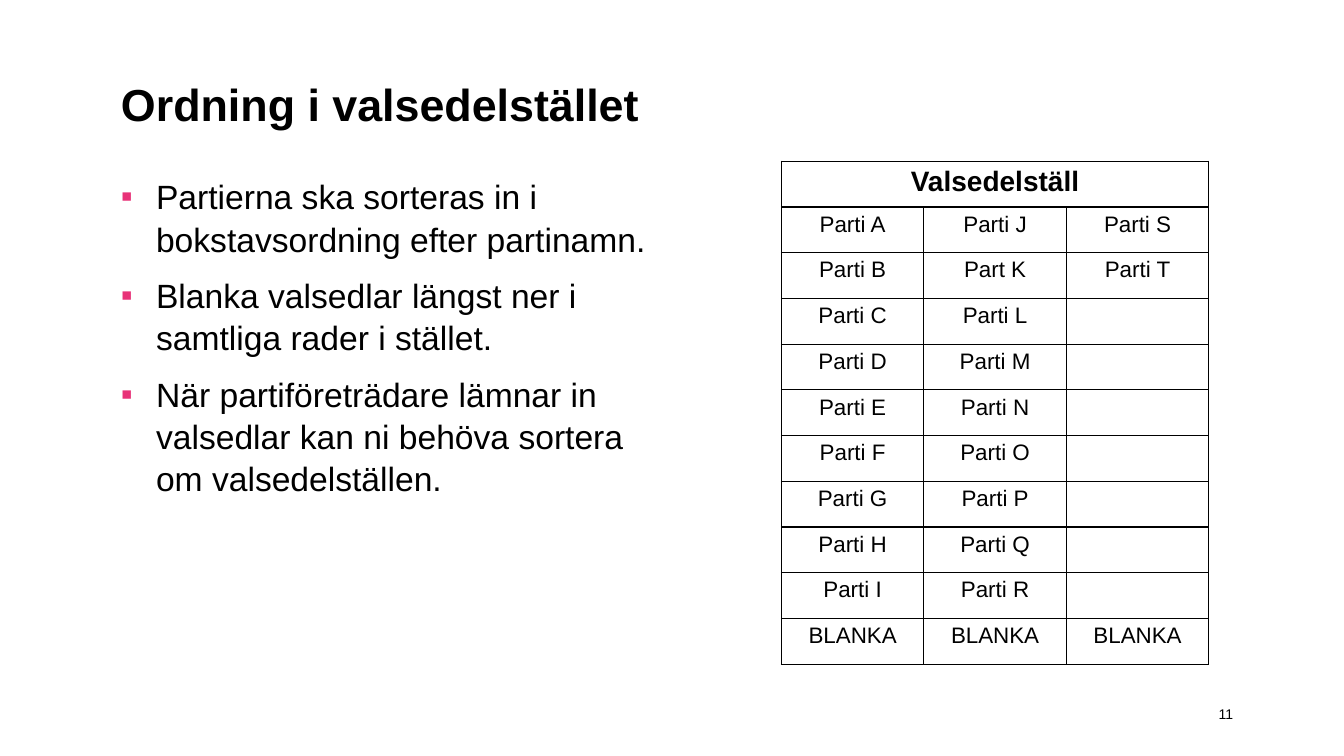
from dataclasses import dataclass

from lxml.etree import SubElement
from pptx import Presentation
from pptx.dml.color import RGBColor as Color
from pptx.enum.text import MSO_ANCHOR as Anchor, MSO_AUTO_SIZE as AutoSize, PP_ALIGN as Align
from pptx.oxml import parse_xml
from pptx.oxml.ns import nsdecls, qn
from pptx.util import Emu, Inches, Pt


@dataclass(frozen=True)
class Theme:
    font: str = "Arial"
    ink: str = "000000"
    accent: str = "E83278"
    title: int = 32
    body: int = 24
    header: int = 20
    cell: int = 16
    number: int = 10
    border: int = 1


THEME = Theme()
WIDTH, HEIGHT = Inches(13.33), Inches(7.5)
HEADER = "Valsedelställ"
BLANK = "BLANKA"
COLUMNS = [
    ["Parti A", "Parti B", "Parti C", "Parti D", "Parti E", "Parti F", "Parti G", "Parti H", "Parti I"],
    ["Parti J", "Part K", "Parti L", "Parti M", "Parti N", "Parti O", "Parti P", "Parti Q", "Parti R"],
    ["Parti S", "Parti T"],
]
PARTY_ROWS = max(len(parties) for parties in COLUMNS)
RULES = [
    "Partierna ska sorteras in i bokstavsordning efter partinamn.",
    "Blanka valsedlar längst ner i samtliga rader i stället.",
    "När partiföreträdare lämnar in valsedlar kan ni behöva sortera om valsedelställen.",
]


def region(left, top, width, height):
    shares = left / 13.33, top / 7.5, width / 13.33, height / 7.5
    return [Emu(round(share * side)) for share, side in zip(shares, (WIDTH, HEIGHT) * 2)]


def write(para, text, size, align=Align.LEFT, bold=False):
    para.text = text
    para.alignment = align
    for font in [para.font] + [span.font for span in para.runs]:
        font.name = THEME.font
        font.size = Pt(size)
        font.bold = bold
        font.color.rgb = Color.from_string(THEME.ink)


def add_title(page, box):
    title = page.shapes.title
    title.left, title.top, title.width, title.height = box
    frame = title.text_frame
    frame.auto_size = AutoSize.NONE
    frame.vertical_anchor = Anchor.BOTTOM
    write(frame.paragraphs[0], "Ordning i valsedelstället", THEME.title, bold=True)
    frame.paragraphs[0].line_spacing = 0.9


def add_bullet(para):
    properties = para._p.get_or_add_pPr()
    properties.set("marL", str(Inches(0.35)))
    properties.set("indent", str(-Inches(0.35)))
    color = SubElement(properties, qn("a:buClr"))
    SubElement(color, qn("a:srgbClr"), val=THEME.accent)
    SubElement(properties, qn("a:buFont"), typeface=THEME.font)
    SubElement(properties, qn("a:buChar"), char="▪")


def add_rules(page, box):
    frame = page.shapes.add_textbox(*box).text_frame
    frame.word_wrap = True
    for index, rule in enumerate(RULES):
        para = frame.add_paragraph() if index else frame.paragraphs[0]
        add_bullet(para)
        write(para, rule, THEME.body)
        para.line_spacing = 1.05
        para.space_before = Pt(10 if index else 0)


def add_borders(cell):
    properties = cell._tc.get_or_add_tcPr()
    for index, side in enumerate(("lnL", "lnR", "lnT", "lnB")):
        properties.insert(index, parse_xml(
            f'<a:{side} {nsdecls("a")} w="{Pt(THEME.border)}"><a:solidFill>'
            f'<a:srgbClr val="{THEME.ink}"/></a:solidFill></a:{side}>'))


def add_rack(page, box):
    rows = PARTY_ROWS + 2
    table = page.shapes.add_table(rows, len(COLUMNS), *box).table
    table.first_row = table.horz_banding = False
    for row in table.rows:
        row.height = box[3] // rows
    for column in table.columns:
        column.width = box[2] // len(COLUMNS)
    for cell in table.iter_cells():
        cell.fill.background()
        add_borders(cell)
    table.cell(0, 0).merge(table.cell(0, len(COLUMNS) - 1))
    write(table.cell(0, 0).text_frame.paragraphs[0], HEADER, THEME.header, Align.CENTER, True)
    for column, parties in enumerate(COLUMNS):
        labels = parties + [""] * (PARTY_ROWS - len(parties)) + [BLANK]
        for row, label in enumerate(labels, 1):
            write(table.cell(row, column).text_frame.paragraphs[0], label, THEME.cell, Align.CENTER)


def add_page_number(page, box):
    frame = page.shapes.add_textbox(*box).text_frame
    frame.word_wrap = True
    frame.margin_right = 0
    frame.vertical_anchor = Anchor.MIDDLE
    write(frame.paragraphs[0], "11", THEME.number, Align.RIGHT)


def main():
    deck = Presentation()
    deck.slide_width, deck.slide_height = WIDTH, HEIGHT
    page = deck.slides.add_slide(deck.slide_layouts[5])
    add_title(page, region(1.1, 0.56, 11.13, 0.79))
    add_rack(page, region(7.75, 1.6, 4.24, 4.99))
    add_page_number(page, region(11.76, 6.88, 0.47, 0.4))
    add_rules(page, region(1.1, 1.68, 5.46, 4.76))
    deck.save("out.pptx")


if __name__ == "__main__":
    main()
